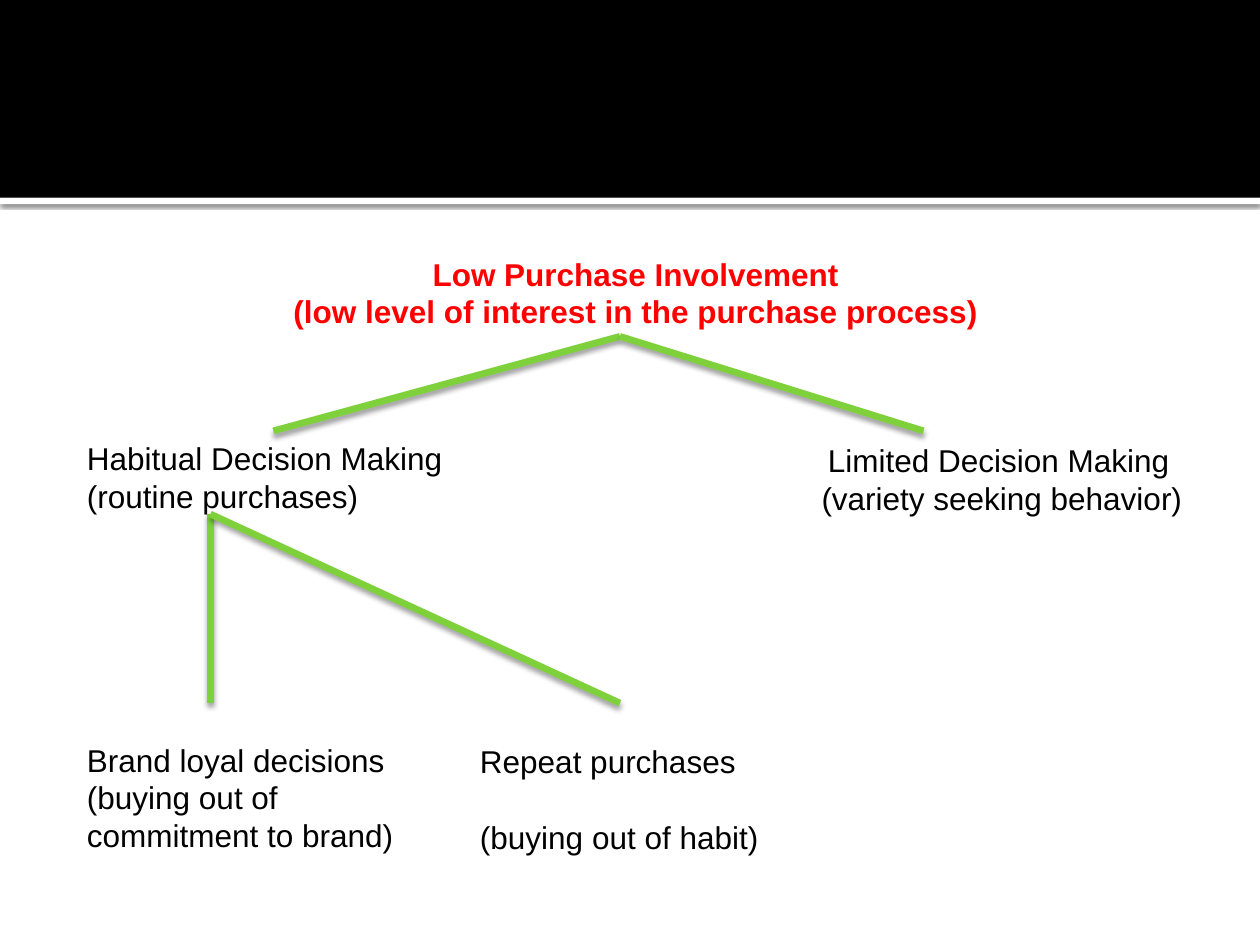
from lxml import etree
from pptx import Presentation
from pptx.dml.color import RGBColor
from pptx.enum.shapes import MSO_CONNECTOR, MSO_SHAPE
from pptx.enum.text import MSO_ANCHOR, MSO_AUTO_SIZE, PP_ALIGN
from pptx.oxml.ns import qn
from pptx.util import Inches, Pt

STRAIGHT = MSO_CONNECTOR.STRAIGHT
RECTANGLE = MSO_SHAPE.RECTANGLE
TOP = MSO_ANCHOR.TOP
NO_FIT = MSO_AUTO_SIZE.NONE
LEFT, CENTER = PP_ALIGN.LEFT, PP_ALIGN.CENTER

BLACK, WHITE, RED, GREEN = "000000", "FFFFFF", "FF0000", "7FD13B"

HEADING = [
    ("Low Purchase Involvement", 0, 0),
    ("(low level of interest in the purchase process)", 0, 0),
]
HABITUAL_BRANCH = [
    ("Habitual Decision Making", 62.3, 0),
    ("(routine purchases)", 0, 0),
    ("Brand loyal decisions", 129, 0),
    ("(buying out of", 0, 0),
    ("commitment to brand)", 0, 0),
]
LIMITED = [
    ("Limited Decision Making", 0, 0.05),
    ("(variety seeking behavior)", 0, 0),
]
REPEAT = [
    ("Repeat purchases", 0, 0),
    ("(buying out of habit)", 22, 0),
]
INVOLVEMENT, HABITUAL = (4.92, 2.67), (1.67, 4.08)
BRANCHES = [
    (INVOLVEMENT, (2.17, 3.42)),
    (INVOLVEMENT, (7.33, 3.42)),
    (HABITUAL, (1.67, 5.58)),
    (HABITUAL, (4.92, 5.58)),
]


def color(hex_code):
    """Return the colour for a hex string."""
    return RGBColor.from_string(hex_code)


def add_shadow(properties, opacity, blur, distance):
    """Add a downward black shadow to shape properties."""
    effects = etree.SubElement(properties, qn("a:effectLst"))
    shadow = etree.SubElement(effects, qn("a:outerShdw"), blurRad=str(Pt(blur)),
                              dist=str(Pt(distance)), dir="5400000",
                              algn="tl", rotWithShape="0")
    shade = etree.SubElement(shadow, qn("a:srgbClr"), val=BLACK)
    etree.SubElement(shade, qn("a:alpha"), val=str(opacity * 1000))


def add_band(slide, left, top, width, height, fill):
    """Draw a borderless band and return it."""
    band = slide.shapes.add_shape(RECTANGLE, Inches(left), Inches(top),
                                  Inches(width), Inches(height))
    band.fill.solid()
    band.fill.fore_color.rgb = color(fill)
    band.line.fill.background()
    return band


def add_header(slide, left, top, width, height):
    """Draw the black header with its shadowed white rule below."""
    rule = add_band(slide, left, top + height, width, 0.05, WHITE)
    add_shadow(rule.element.spPr, 60, 2.5, 0.8)
    header = add_band(slide, left, top, width, height, BLACK)
    header.shadow.inherit = False


def set_frame(frame, left, top, right, bottom):
    """Fix wrapping, anchor and insets of a text frame."""
    frame.word_wrap = True
    frame.auto_size = NO_FIT
    frame.vertical_anchor = TOP
    frame.margin_left, frame.margin_right = Inches(left), Inches(right)
    frame.margin_top, frame.margin_bottom = Inches(top), Inches(bottom)


def add_lines(frame, lines, fill=BLACK, bold=False, align=LEFT):
    """Write unbulleted lines, each with its space before and indent."""
    for text, space, indent in lines:
        paragraph = frame.paragraphs[-1]
        if paragraph.runs:
            paragraph = frame.add_paragraph()
        paragraph.alignment = align
        paragraph.space_before = Pt(space)
        properties = paragraph._p.get_or_add_pPr()
        properties.set("marL", str(Inches(indent)))
        properties.set("indent", "0")
        etree.SubElement(properties, qn("a:buNone"))
        run = paragraph.add_run()
        run.text = text
        run.font.name = "Arial"
        run.font.size = Pt(18)
        run.font.bold = bold
        run.font.color.rgb = color(fill)


def fill_body(body, left, top, width, height):
    """Place the body and write the heading and the habitual branch."""
    body.left, body.top = Inches(left), Inches(top)
    body.width, body.height = Inches(width), Inches(height)
    body.line.color.rgb = color(WHITE)
    body.line.width = Pt(0.75)
    set_frame(body.text_frame, 0.19, 0.1, 0.1, 0.05)
    add_lines(body.text_frame, HEADING, RED, True, CENTER)
    add_lines(body.text_frame, HABITUAL_BRANCH)


def add_node(slide, left, top, width, height, lines):
    """Add a decision to the right of the habitual branch."""
    node = slide.shapes.add_textbox(Inches(left), Inches(top),
                                    Inches(width), Inches(height))
    set_frame(node.text_frame, 0, 0, 0, 0)
    add_lines(node.text_frame, lines)


def add_branch(slide, start, end):
    """Draw a green branch between two points."""
    branch = slide.shapes.add_connector(STRAIGHT, *map(Inches, start + end))
    branch.line.color.rgb = color(GREEN)
    branch.line.width = Pt(3.82)
    add_shadow(branch._element.spPr, 38, 3.1, 2)


def main():
    """Build and save the slide."""
    deck = Presentation()
    deck.slide_width, deck.slide_height = Inches(10), Inches(7.5)
    slide = deck.slides.add_slide(deck.slide_layouts[1])
    title = slide.shapes.title.element
    title.getparent().remove(title)
    add_header(slide, 0, 0, 10, 1.57)
    fill_body(slide.placeholders[1], 0.5, 1.92, 9, 5.17)
    add_node(slide, 6.52, 3.5, 2.98, 0.6, LIMITED)
    add_node(slide, 3.81, 5.89, 2.6, 0.92, REPEAT)
    for start, end in BRANCHES:
        add_branch(slide, start, end)
    deck.save("out.pptx")


if __name__ == "__main__":
    main()
